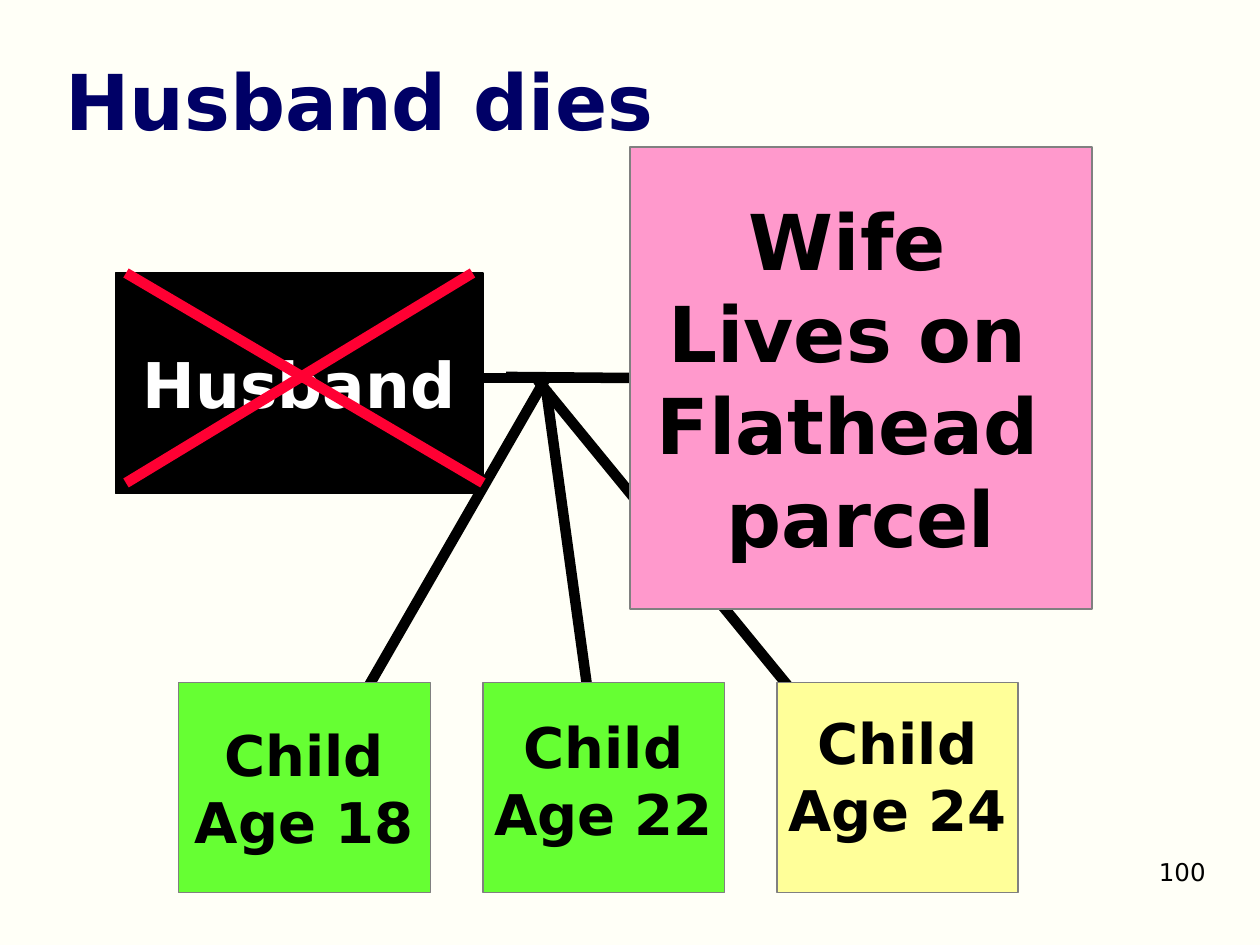
"""Build the family diagram slide 'Husband dies'."""
import pptx
import pptx.dml.color
import pptx.enum.shapes
import pptx.enum.text
import pptx.oxml.ns
import pptx.util
from lxml import etree

ALIGN = pptx.enum.text.PP_ALIGN
ANCHOR = pptx.enum.text.MSO_ANCHOR
COLORS = {
    "paper": "FFFFF7",
    "title": "000066",
    "black": "000000",
    "white": "FFFFFF",
    "border": "808080",
    "cross": "FF0033",
    "green": "66FF33",
    "yellow": "FFFF99",
    "pink": "FF99CC",
}


class FamilySlide:
    """Hold the style and the current page on a grid of 120 by 90 cells."""

    font_name = "DejaVu Sans"
    columns, rows = 120, 90

    def __init__(self, deck):
        """Add a title-only page with the paper background."""
        self.cell_width = deck.slide_width / self.columns
        self.cell_height = deck.slide_height / self.rows
        self.page = deck.slides.add_slide(deck.slide_layouts[5])
        self.paint(self.page.background.fill, "paper")

    def color(self, name):
        """Return the named colour."""
        return pptx.dml.color.RGBColor.from_string(COLORS[name])

    def paint(self, fill, name):
        """Make a fill solid in the named colour."""
        fill.solid()
        fill.fore_color.rgb = self.color(name)

    def place(self, column, row, width, height):
        """Turn grid cells into slide lengths."""
        return (
            round(column * self.cell_width),
            round(row * self.cell_height),
            round(width * self.cell_width),
            round(height * self.cell_height),
        )

    def add_lines(self, frame, lines, size, color, align, bold=True):
        """Add one paragraph per line of text."""
        for index, line in enumerate(lines):
            para = frame.add_paragraph() if index else frame.paragraphs[0]
            para.alignment = align
            span = para.add_run()
            span.text = line
            span.font.name = self.font_name
            span.font.size = pptx.util.Pt(size)
            span.font.bold = bold
            span.font.color.rgb = self.color(color)

    def title(self, text, area):
        """Fill and move the title placeholder."""
        box = self.page.shapes.title
        box.left, box.top, box.width, box.height = self.place(*area)
        frame = box.text_frame
        frame.auto_size = pptx.enum.text.MSO_AUTO_SIZE.NONE
        frame.vertical_anchor = ANCHOR.MIDDLE
        self.add_lines(frame, [text], 44, "title", ALIGN.LEFT)

    def number(self, text, area):
        """Add the page number."""
        frame = self.page.shapes.add_textbox(*self.place(*area)).text_frame
        frame.word_wrap = True
        self.add_lines(frame, [text], 14, "black", ALIGN.RIGHT, bold=False)

    def person(self, lines, area, fill, size, color="black", border="border", bottom=0.05):
        """Add a family member as a labelled rectangle."""
        kind = pptx.enum.shapes.MSO_SHAPE.RECTANGLE
        box = self.page.shapes.add_shape(kind, *self.place(*area))
        box.shadow.inherit = False
        self.paint(box.fill, fill)
        box.line.color.rgb = self.color(border)
        box.line.width = pptx.util.Pt(1)
        frame = box.text_frame
        frame.word_wrap = False
        frame.vertical_anchor = ANCHOR.MIDDLE
        frame.margin_bottom = pptx.util.Inches(bottom)
        self.add_lines(frame, lines, size, color, ALIGN.CENTER)

    def line(self, start, end, color="black"):
        """Add a thick straight line between two grid points."""
        kind = pptx.enum.shapes.MSO_CONNECTOR.STRAIGHT
        ends = self.place(*start, *end)
        link = self.page.shapes.add_connector(kind, *ends)
        link.line.color.rgb = self.color(color)
        link.line.width = pptx.util.Pt(6)
        properties = link._element.spPr
        etree.SubElement(properties, pptx.oxml.ns.qn("a:effectLst"))


def main():
    """Build and save the deck."""
    deck = pptx.Presentation()
    deck.slide_width = pptx.util.Inches(10)
    deck.slide_height = pptx.util.Inches(7.5)
    family = FamilySlide(deck)

    family.title("Husband dies", (5, 2, 111, 15))
    family.number("100", (88, 81, 28, 6.2))

    for start, end in (
        ((52, 37), (56, 66)),
        ((52, 36), (33, 69)),
        ((51.2, 36.2), (75.6, 66)),
        ((46, 36), (60, 36)),
        ((48.2, 35.9), (60, 36)),
    ):
        family.line(start, end)

    for age, column, width, fill, bottom in (
        (18, 17, 24, "green", 0.05),
        (22, 46, 23, "green", 0.18),
        (24, 74, 23, "yellow", 0.24),
    ):
        area = (column, 65, width, 20)
        family.person(["Child", f"Age {age}"], area, fill, 32, bottom=bottom)

    wife = ["Wife ", "Lives on ", "Flathead ", "parcel"]
    family.person(wife, (60, 14, 44, 44), "pink", 44)
    family.person(["Husband"], (11, 26, 35, 21), "black", 36, "white", "black")
    family.line((45, 26), (12, 46), "cross")
    family.line((12, 26), (46, 46), "cross")

    deck.save("out.pptx")


if __name__ == "__main__":
    main()
